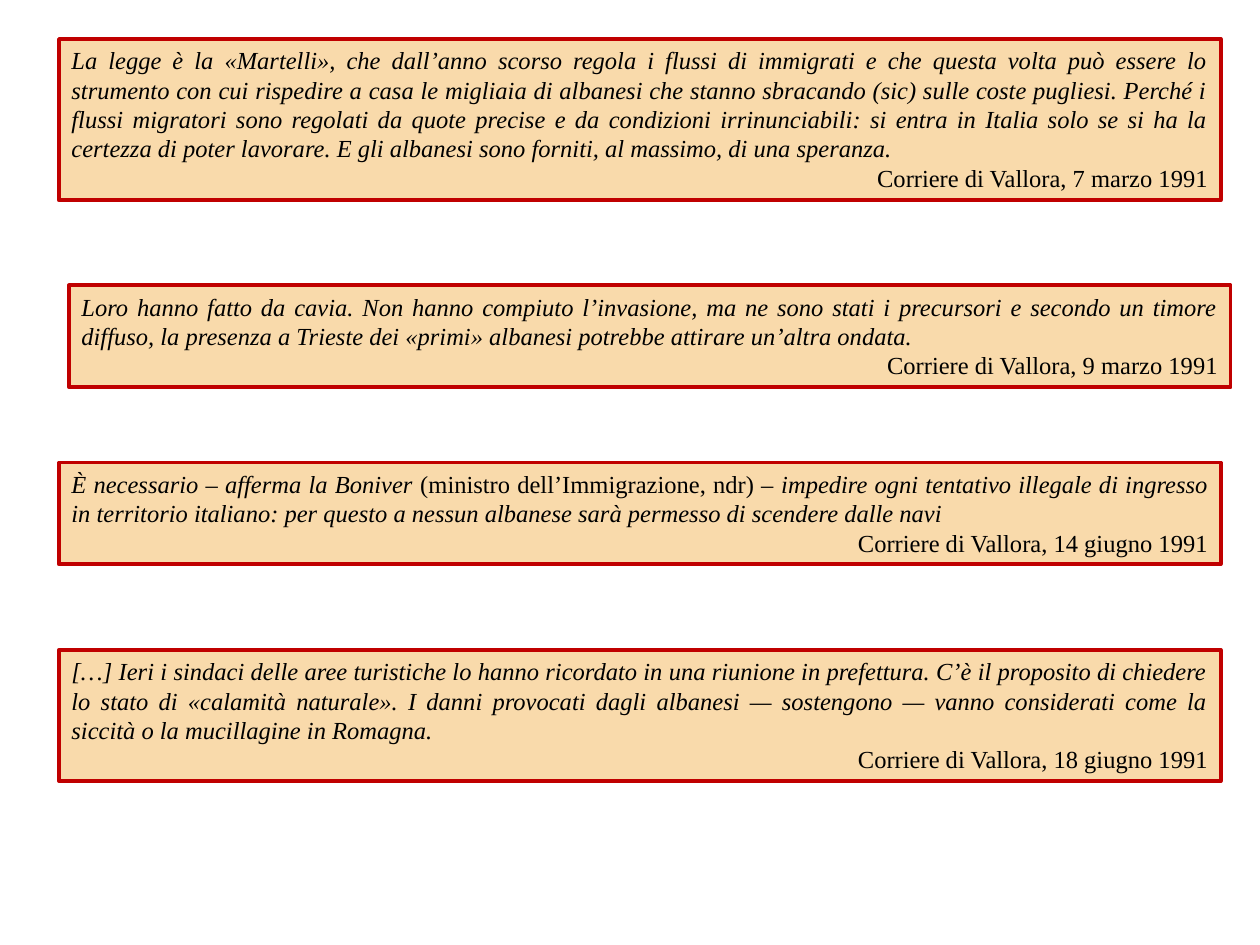
from pptx import Presentation
from pptx.dml.color import RGBColor
from pptx.enum.text import MSO_AUTO_SIZE as AutoSize, MSO_ANCHOR as Anchor, PP_ALIGN as Align
from pptx.util import Pt

SAND = RGBColor(0xF9, 0xDA, 0xAB)
DARK_RED = RGBColor(0xC0, 0x00, 0x00)
BLACK = RGBColor(0x00, 0x00, 0x00)

FONT = "Times New Roman"
NEWSPAPER = "Corriere di Vallora"
LEFT = 33.75
BOX_WIDTH = 663.75

# Left, top, height, date, and the quotation as (text, italic) spans
QUOTES = [
    (LEFT, 22.3, 92.2, "7 marzo 1991", [
        ("La legge è la «Martelli», che dall’anno scorso regola i flussi di immigrati "
         "e che questa volta può essere lo strumento con cui rispedire a casa le "
         "migliaia di albanesi che stanno sbracando (sic) sulle coste pugliesi. Perché "
         "i flussi migratori sono regolati da quote precise e da condizioni "
         "irrinunciabili: si entra in Italia solo se si ha la certezza di poter "
         "lavorare. E gli albanesi sono forniti, al massimo, di una speranza.", True),
    ]),
    (LEFT + 5.7, 163.1, 58.2, "9 marzo 1991", [
        ("Loro hanno fatto da cavia. Non hanno compiuto l’invasione, ma ne sono stati "
         "i precursori e secondo un timore diffuso, la presenza a Trieste dei «primi» "
         "albanesi potrebbe attirare un’altra ondata.", True),
    ]),
    (LEFT, 264.3, 58.2, "14 giugno 1991", [
        ("È necessario – afferma la Boniver", True),
        (" (ministro dell’Immigrazione, ndr) –", False),
        (" impedire ogni tentativo illegale di ingresso in territorio italiano: per "
         "questo a nessun albanese sarà permesso di scendere dalle navi", True),
    ]),
    (LEFT, 371.4, 75, "18 giugno 1991", [
        ("[…] Ieri i sindaci delle aree turistiche lo hanno ricordato in una riunione "
         "in prefettura. C’è il proposito di chiedere lo stato di «calamità naturale». "
         "I danni provocati dagli albanesi — sostengono — vanno considerati come la "
         "siccità o la mucillagine in Romagna.", True),
    ]),
]


def add_span(para, text, *, italic=False, size=14, color=BLACK):
    span = para.add_run()
    span.text = text
    span.font.name = FONT
    span.font.size = Pt(size)
    span.font.italic = italic
    span.font.color.rgb = color


def add_quote_box(page, left, top, height, date, spans):
    """Add a framed box with a justified quotation and its source at the right."""
    box = page.shapes.add_textbox(Pt(left), Pt(top), Pt(BOX_WIDTH), Pt(height))
    box.fill.solid()
    box.fill.fore_color.rgb = SAND
    box.line.color.rgb = DARK_RED
    box.line.width = Pt(2.25)

    frame = box.text_frame
    frame.word_wrap = True
    frame.auto_size = AutoSize.SHAPE_TO_FIT_TEXT
    frame.vertical_anchor = Anchor.TOP

    quotation = frame.paragraphs[0]
    quotation.alignment = Align.JUSTIFY
    for text, italic in spans:
        add_span(quotation, text, italic=italic)

    source = frame.add_paragraph()
    source.alignment = Align.RIGHT
    add_span(source, f"{NEWSPAPER}, {date}")


def main():
    deck = Presentation()
    deck.slide_width, deck.slide_height = Pt(720), Pt(540)
    page = deck.slides.add_slide(deck.slide_layouts[6])
    for quote in QUOTES:
        add_quote_box(page, *quote)
    deck.save("out.pptx")


if __name__ == "__main__":
    main()
